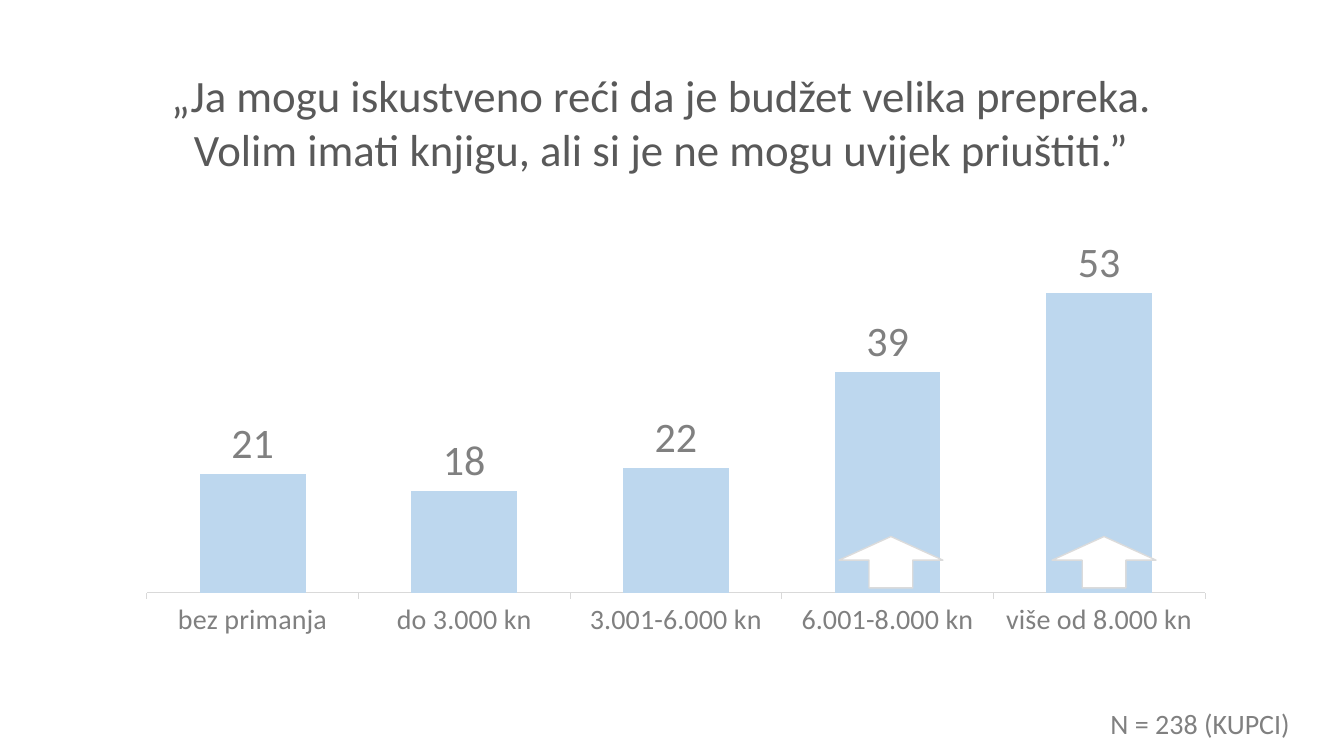
from lxml import etree
from pptx import Presentation
from pptx.chart.data import CategoryChartData
from pptx.dml.color import RGBColor
from pptx.enum.chart import XL_CHART_TYPE as ChartType, XL_LABEL_POSITION as LabelPosition
from pptx.enum.chart import XL_TICK_MARK as TickMark
from pptx.enum.shapes import MSO_SHAPE as Shape
from pptx.enum.text import MSO_ANCHOR as Anchor, MSO_AUTO_SIZE as AutoSize, PP_ALIGN as Align
from pptx.oxml.ns import qn
from pptx.util import Emu, Pt

PX = 9525
WHITE = RGBColor(0xFF, 0xFF, 0xFF)
DARK_GRAY = RGBColor(0x59, 0x59, 0x59)
GRAY = RGBColor(0x80, 0x80, 0x80)
AXIS_GRAY = RGBColor(0xD9, 0xD9, 0xD9)
ARROW_GRAY = RGBColor(0xDB, 0xDB, 0xDB)
LIGHT_BLUE = RGBColor(0xBD, 0xD7, 0xEE)


def px(*lengths):
    return [Emu(length * PX) for length in lengths]


def set_font(font, size, color):
    for name, value in {"name": "Calibri", "size": Pt(size), "bold": False}.items():
        setattr(font, name, value)
    font.color.rgb = color


deck = Presentation()
deck.slide_width, deck.slide_height = px(1280, 720)
page = deck.slides.add_slide(deck.slide_layouts[5])

# Income chart
chart_data = CategoryChartData(number_format="0")
chart_data.categories = ["bez primanja", "do 3.000 kn", "3.001-6.000 kn",
                         "6.001-8.000 kn", "više od 8.000 kn"]
chart_data.add_series("Series 1", [21, 18, 22, 39, 53])
chart = page.shapes.add_chart(ChartType.COLUMN_CLUSTERED, *px(108, 188, 1061, 443), chart_data).chart
chart.has_title = False
chart.has_legend = False
set_font(chart.font, 10, GRAY)

income_axis = chart.category_axis
income_axis.major_tick_mark = TickMark.OUTSIDE
income_axis.format.line.color.rgb = AXIS_GRAY
income_axis.format.line.width = Pt(0.75)
set_font(income_axis.tick_labels.font, 20, GRAY)

value_axis = chart.value_axis
for name, value in {"visible": False, "has_major_gridlines": False,
                    "minimum_scale": 0, "maximum_scale": 60}.items():
    setattr(value_axis, name, value)

plot = chart.plots[0]
for name, value in {"gap_width": 100, "overlap": -27, "vary_by_categories": False,
                    "has_data_labels": True}.items():
    setattr(plot, name, value)
plot.series[0].format.fill.solid()
plot.series[0].format.fill.fore_color.rgb = LIGHT_BLUE
labels = plot.data_labels
labels.show_value = True
labels.position = LabelPosition.OUTSIDE_END
set_font(labels.font, 30, GRAY)

# Fixed inner plot area
plot_area = chart.element.find(".//" + qn("c:plotArea"))
for old_layout in plot_area.findall(qn("c:layout")):
    plot_area.remove(old_layout)
layout = etree.Element(qn("c:layout"))
manual_layout = etree.SubElement(layout, qn("c:manualLayout"))
for tag, value in {"layoutTarget": "inner", "xMode": "edge", "yMode": "edge",
                   "x": "0.03", "y": "0.12", "w": "0.95", "h": "0.73"}.items():
    etree.SubElement(manual_layout, qn("c:" + tag)).set("val", value)
plot_area.insert(0, layout)

# Arrows on the two highest incomes
for left in (799, 1002):
    arrow = page.shapes.add_shape(Shape.UP_ARROW, *px(left, 511, 99, 49))
    arrow.adjustments[0] = 0.42
    arrow.adjustments[1] = 0.46
    arrow.shadow.inherit = False
    arrow.fill.solid()
    arrow.fill.fore_color.rgb = WHITE
    arrow.line.color.rgb = ARROW_GRAY
    arrow.line.width = Pt(1)

# Quote and sample size
quote = page.shapes.title
quote.left, quote.top, quote.width, quote.height = px(127, 60, 1006, 113)
note = page.shapes.add_textbox(*px(1044, 668, 194, 42))
for box, text, align, size, color in (
    (quote, "„Ja mogu iskustveno reći da je budžet velika prepreka. "
            "Volim imati knjigu, ali si je ne mogu uvijek priuštiti.”", Align.CENTER, 32, DARK_GRAY),
    (note, "N = 238 (KUPCI)", Align.RIGHT, 20, GRAY),
):
    frame = box.text_frame
    for name, value in {"word_wrap": True, "auto_size": AutoSize.NONE,
                        "vertical_anchor": Anchor.TOP}.items():
        setattr(frame, name, value)
    para = frame.paragraphs[0]
    para.alignment = align
    para.line_spacing = 1.0
    span = para.add_run()
    span.text = text
    set_font(span.font, size, color)

deck.save("out.pptx")
